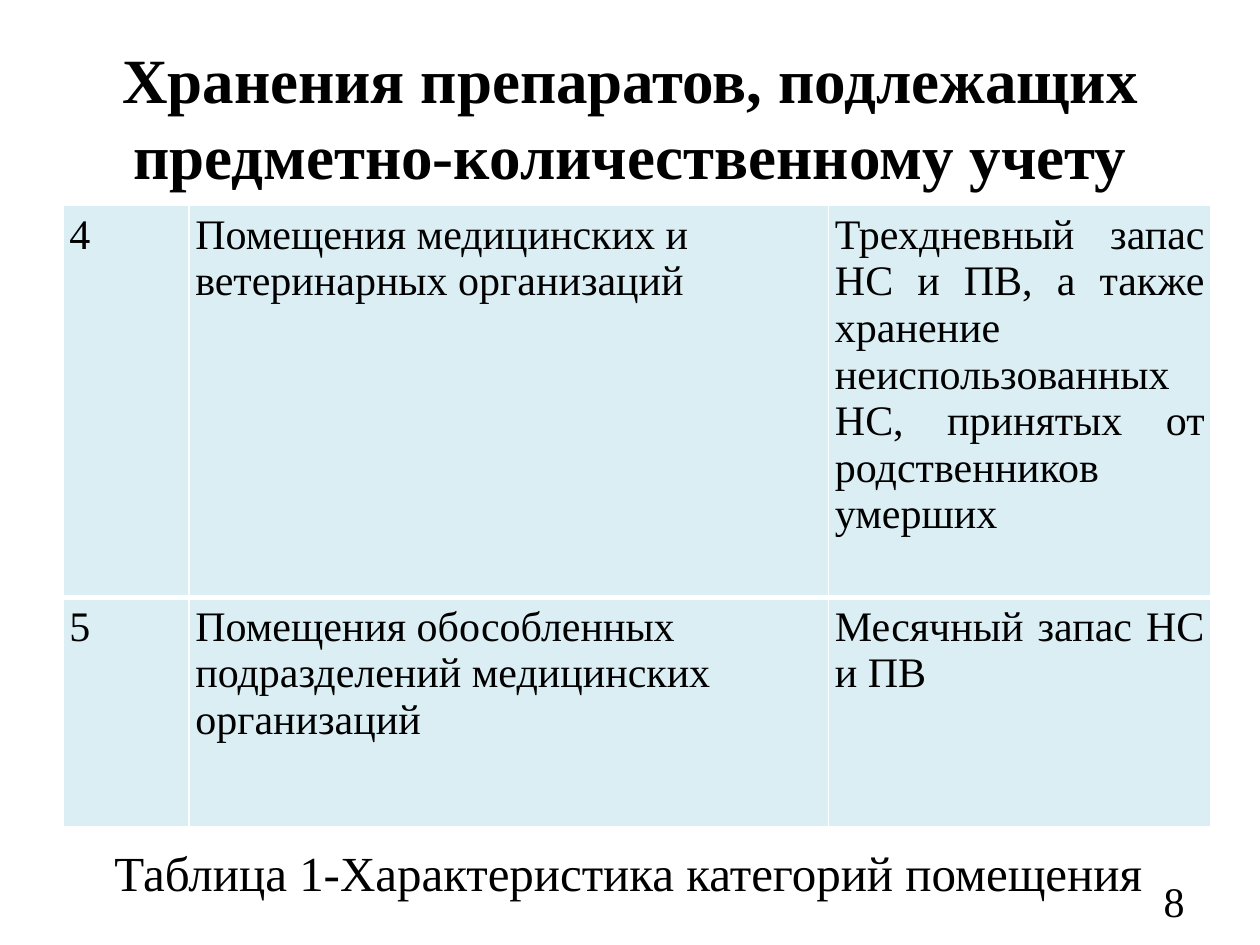
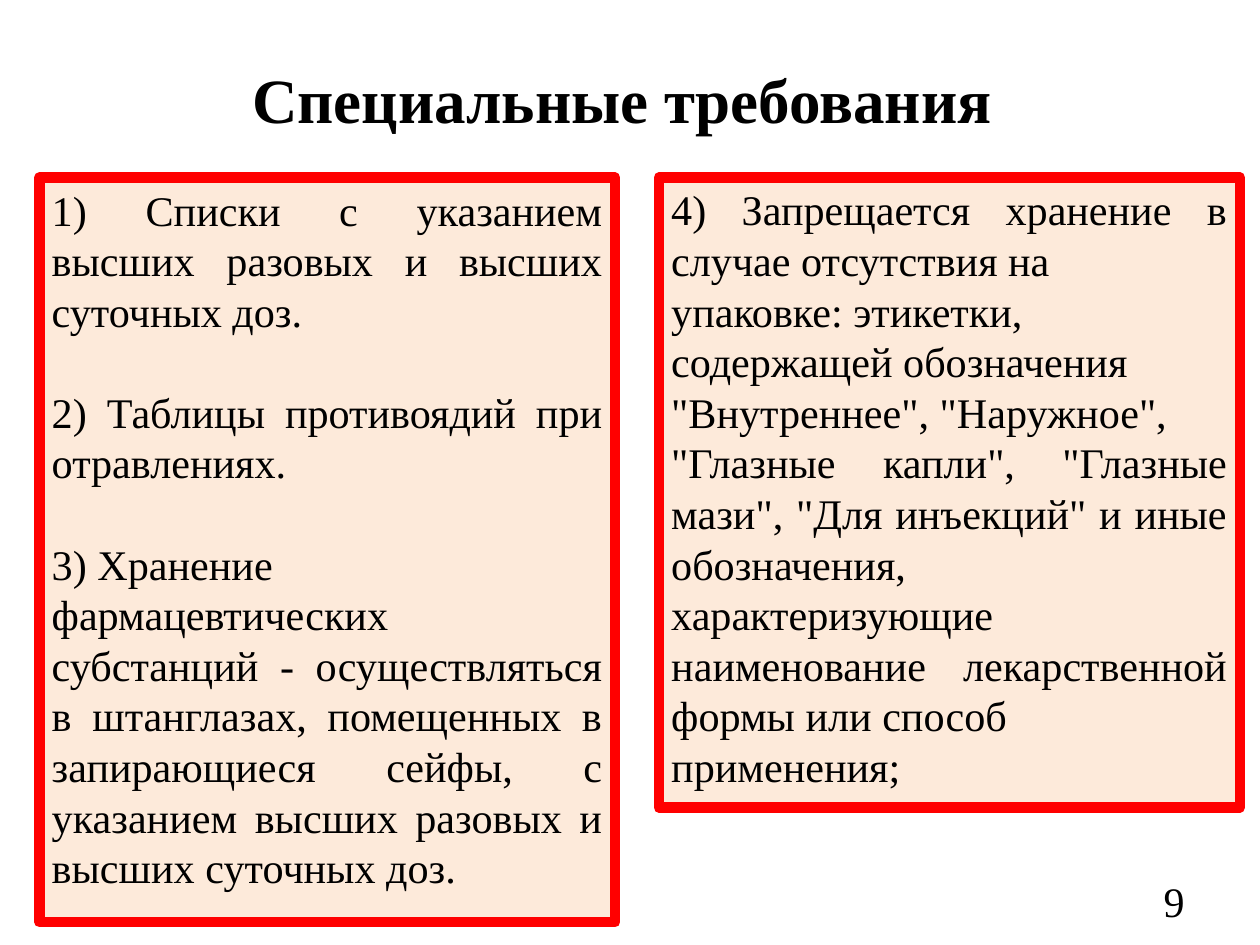
from lxml import etree
from pptx import Presentation
from pptx.dml.color import RGBColor
from pptx.enum.shapes import MSO_SHAPE as Shape
from pptx.enum.text import MSO_ANCHOR as Anchor, PP_ALIGN as Align
from pptx.oxml.ns import qn
from pptx.util import Pt

FONT = "Times New Roman"
BLACK, WHITE, RED = "000000", "FFFFFF", "FF0000"
PEACH, AQUA = "FDEADA", "DBEEF4"
LEFT, WIDTH = 36, 648
TOP = 101.5

ROOMS = [
    ("4",
     ["Помещения медицинских и", "ветеринарных организаций"],
     "Трехдневный запас НС и ПВ, а также хранение неиспользованных НС, "
     "принятых от родственников умерших"),
    ("5",
     ["Помещения обособленных", "подразделений медицинских", "организаций"],
     "Месячный запас НС и ПВ"),
]
DOSES = [
    "1) Списки с указанием высших разовых и высших суточных доз.",
    "2) Таблицы противоядий при отравлениях.",
    "3) Хранение",
    "фармацевтических субстанций - осуществляться в штанглазах, помещенных "
    "в запирающиеся сейфы, с указанием высших разовых и высших суточных доз.",
]
LABELS = [
    "4) Запрещается хранение в случае отсутствия на",
    "упаковке: этикетки,",
    "содержащей обозначения",
    '"Внутреннее", "Наружное",',
    '"Глазные капли", "Глазные мази", "Для инъекций" и иные обозначения, '
    "характеризующие наименование лекарственной формы или способ",
    "применения;",
]


def rgb(code):
    return RGBColor.from_string(code)


def write(frame, lines, size, align, pitch=None, bold=False, gaps=()):
    """Fill a frame; gaps lists the paragraphs set off by one line."""
    frame.word_wrap = True
    if isinstance(lines, str):
        lines = [lines]
    for i, line in enumerate(lines):
        para = frame.paragraphs[0] if i == 0 else frame.add_paragraph()
        para.text = line
        para.alignment = align
        if pitch:
            para.line_spacing = Pt(pitch)
        if i in gaps:
            para.space_before = Pt(pitch)
        font = para.font
        font.name, font.size, font.bold = FONT, Pt(size), bold
        font.color.rgb = rgb(BLACK)


def add_text(slide, box, text, size, align, anchor=Anchor.TOP, **style):
    frame = slide.shapes.add_textbox(*map(Pt, box)).text_frame
    frame.vertical_anchor = anchor
    write(frame, text, size, align, **style)


def add_base(deck, title, top, height, number):
    """Start a slide with its title and page number."""
    slide = deck.slides.add_slide(deck.slide_layouts[6])
    add_text(slide, (LEFT, top, WIDTH, height), title, 36, Align.CENTER,
             Anchor.MIDDLE, pitch=43.4, bold=True)
    add_text(slide, (516, 500.5, 168, 28.8), str(number), 24, Align.RIGHT,
             Anchor.MIDDLE)
    return slide


def add_panel(slide, left, width, height, lines, gaps=()):
    panel = slide.shapes.add_shape(
        Shape.RECTANGLE, Pt(left), Pt(TOP), Pt(width), Pt(height))
    panel.shadow.inherit = False
    panel.fill.solid()
    panel.fill.fore_color.rgb = rgb(PEACH)
    panel.line.color.rgb = rgb(RED)
    panel.line.width = Pt(6)
    panel.text_frame.vertical_anchor = Anchor.TOP
    write(panel.text_frame, lines, 24.1, Align.JUSTIFY, 28.9, gaps=gaps)


def set_edges(cell, **widths):
    """Draw white cell borders, given in points by side."""
    props = cell._tc.get_or_add_tcPr()
    for i, side in enumerate("LRTB"):
        edge = etree.Element(qn(f"a:ln{side}"), w=str(Pt(widths.get(side, 1))))
        fill = etree.SubElement(edge, qn("a:solidFill"))
        etree.SubElement(fill, qn("a:srgbClr"), val=WHITE)
        props.insert(i, edge)


def add_rooms(slide):
    cols, rows = (72, 365.5, 218.5), (224, 131)
    table = slide.shapes.add_table(
        len(rows), len(cols), Pt(LEFT), Pt(117.5),
        Pt(sum(cols)), Pt(sum(rows))).table
    for col, width in zip(table.columns, cols):
        col.width = Pt(width)
    for r, (height, texts) in enumerate(zip(rows, ROOMS)):
        table.rows[r].height = Pt(height)
        for c, text in enumerate(texts):
            cell = table.cell(r, c)
            cell.margin_left = cell.margin_right = Pt(3.6)
            cell.margin_top = cell.margin_bottom = Pt(3.6)
            cell.fill.solid()
            cell.fill.fore_color.rgb = rgb(AQUA)
            set_edges(cell, **({"B": 3} if r == 0 else {"T": 3}))
            write(cell.text_frame, text, 24, Align.JUSTIFY, 26.6)


def main():
    deck = Presentation()
    deck.slide_width, deck.slide_height = Pt(720), Pt(540)

    slide = add_base(
        deck, "Хранения препаратов, подлежащих предметно-количественному учету",
        21.6, 90, 8)
    add_rooms(slide)
    add_text(slide, (34, 478, 650, 45.5),
             "Таблица 1-Характеристика категорий помещения", 28, Align.CENTER)

    slide = add_base(deck, "Специальные требования ", 22.5, 67.5, 9)
    add_panel(slide, 22.5, 329, 425.5, DOSES, gaps=(1, 2))
    add_panel(slide, 376.5, 332, 360, LABELS)

    deck.save("out.pptx")


if __name__ == "__main__":
    main()
